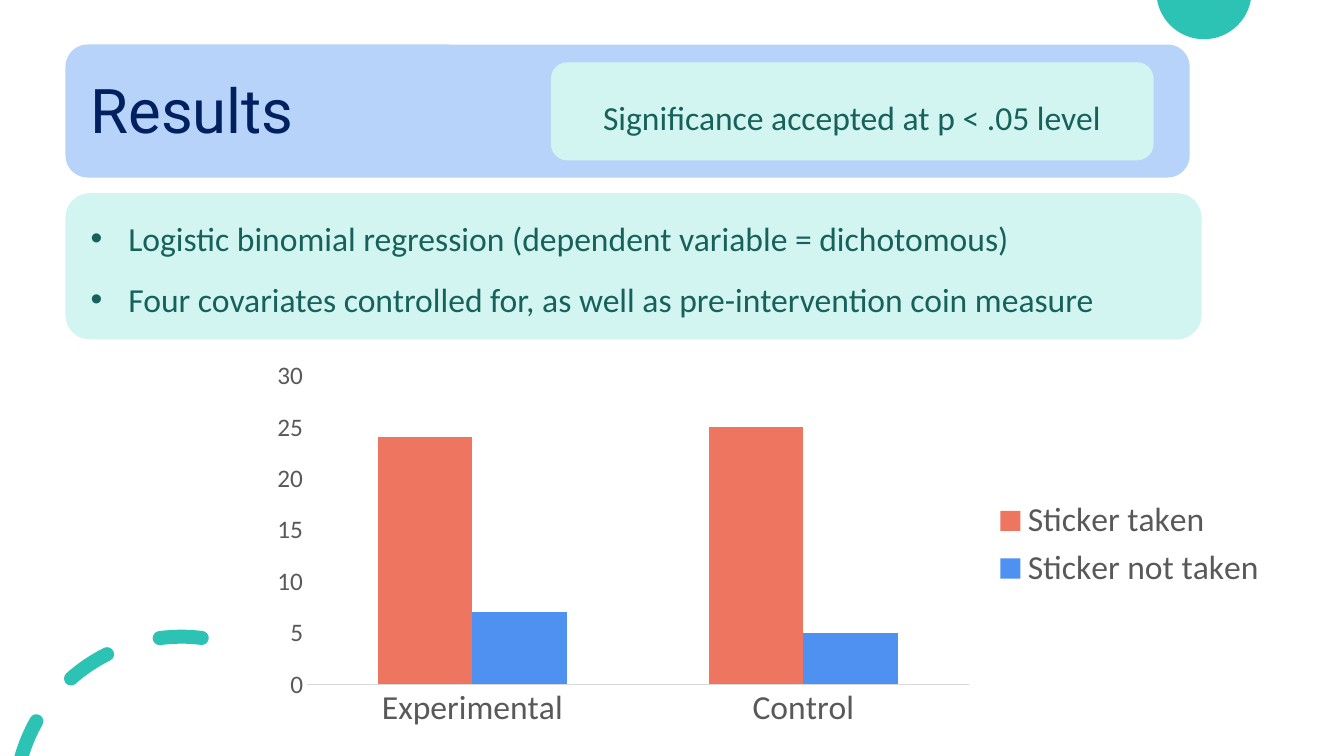
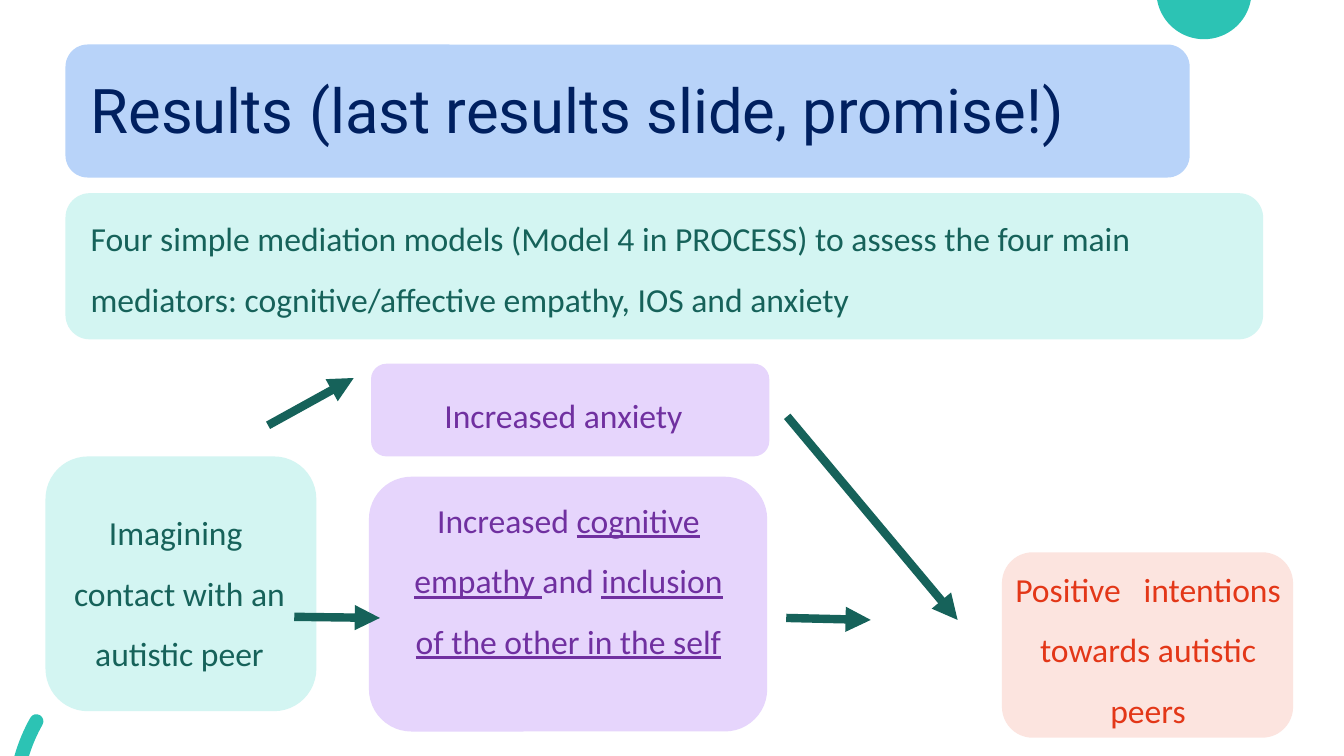
from math import cos, radians, sin, tan

from lxml import etree
from pptx import Presentation
from pptx.chart.data import CategoryChartData
from pptx.dml.color import RGBColor
from pptx.enum.chart import XL_CHART_TYPE, XL_LEGEND_POSITION, XL_TICK_MARK
from pptx.enum.shapes import MSO_CONNECTOR, MSO_SHAPE
from pptx.enum.text import MSO_ANCHOR, MSO_AUTO_SIZE, PP_ALIGN
from pptx.oxml.ns import qn
from pptx.util import Pt

COLUMN = XL_CHART_TYPE.COLUMN_CLUSTERED
RIGHT = XL_LEGEND_POSITION.RIGHT
NO_TICK = XL_TICK_MARK.NONE
ROUND = MSO_SHAPE.ROUNDED_RECTANGLE
STRAIGHT = MSO_CONNECTOR.STRAIGHT
TOP, MIDDLE = MSO_ANCHOR.TOP, MSO_ANCHOR.MIDDLE
FIXED = MSO_AUTO_SIZE.NONE
LEFT, CENTER = PP_ALIGN.LEFT, PP_ALIGN.CENTER

WIDTH, HEIGHT = 960, 540
TEAL, MINT, PINE = "2CC3B4", "D3F5F2", "16625A"
SKY, NAVY = "B8D3F9", "002060"
LILAC, PURPLE = "E6D5FC", "7030A0"
BLUSH, RED = "FCE4DF", "E33718"
GRAY, SILVER = "595959", "D9D9D9"
HEAD, BODY = "Roboto", "Calibri"
PLAIN, UNDER, WIDE = range(3)

# A paragraph is a list of (text, look) runs.
RESULTS = {
    "title": "Results",
    "body": ["Logistic binomial regression (dependent variable = dichotomous)",
             "Four covariates controlled for, as well as pre-intervention coin measure"],
    "bullets": True, "card": 811.5, "text": 792,
}
MODELS = {
    "title": "Results (last results slide, promise!)",
    "body": ["Four simple mediation models (Model 4 in PROCESS) to assess the four main "
             "mediators: cognitive/affective empathy, IOS and anxiety"],
    "bullets": False, "card": 855.5, "text": 828,
}
# Each card: box, fill, text box, text colour, paragraphs
NOTE = ((393.5, 44.5, 430.5, 70), MINT, (393.5, 51, 430, 45), PINE,
        [[("Significance accepted at p < .05 level", PLAIN)]])
CARDS = [
    ((32.5, 326, 193.5, 182), MINT, (16, 348, 224.5, 132), PINE,
     [[("Imagining ", PLAIN)], [("contact with an autistic peer", PLAIN)]]),
    ((265, 259.8, 284.5, 66.2), LILAC, (299, 264.3, 207, 45), PURPLE,
     [[("Increased anxiety", PLAIN)]]),
    ((263.5, 340.5, 284.5, 182), LILAC, (280.8, 339, 250.5, 176), PURPLE,
     [[("Increased ", PLAIN), ("cognitive empathy ", UNDER), ("and ", PLAIN),
       ("inclusion of the other in the self", UNDER)]]),
    ((715.7, 394.5, 208, 132.5), BLUSH, (712.8, 388.1, 214.5, 132), RED,
     [[("Positive", PLAIN), (" ", WIDE),
       ("intentions towards autistic peers", PLAIN)]]),
]
ARROWS = [(191.5, 303.8, 252.7, 270), (561.6, 441.4, 622, 442.8),
          (562.3, 297.4, 684, 442.8), (210.2, 440.6, 271.4, 441.4)]
GROUPS = ["Experimental", "Control"]
SERIES = [("Sticker taken", (24, 25), "EE7661"),
          ("Sticker not taken", (7, 5), "4E91F0")]
RING = (129.6, 573.8)
INNER, MID, OUTER = 114, 119, 124
DASHES = [(116.5, 131.5), (83, 97.5)]


def rgb(code):
    return RGBColor.from_string(code)


def pts(box):
    return [Pt(n) for n in box]


def place(shape, box):
    shape.left, shape.top, shape.width, shape.height = pts(box)


def paint(shape, color):
    shape.shadow.inherit = False
    shape.fill.solid()
    shape.fill.fore_color.rgb = rgb(color)
    shape.line.fill.background()
    return shape


def style(font, size, color, name=BODY):
    font.size, font.name = Pt(size), name
    font.color.rgb = rgb(color)


def card(slide, box, color):
    return paint(slide.shapes.add_shape(ROUND, *pts(box)), color)


def write(frame, paras, color, align=LEFT, size=24, name=BODY, gap=1.5, anchor=TOP):
    frame.word_wrap, frame.auto_size = True, FIXED
    frame.vertical_anchor = anchor
    for i, runs in enumerate(paras):
        para = frame.add_paragraph() if i else frame.paragraphs[0]
        para.alignment, para.line_spacing = align, gap
        para.space_before = Pt(0)
        for text, look in runs:
            run = para.add_run()
            run.text = text
            style(run.font, size, color, name)
            if look == UNDER:
                run.font.underline = True
            elif look == WIDE:
                run._r.get_or_add_rPr().set("spc", "1085")


def label(slide, box, fill, area, color, paras):
    """Draw a card with centred text over it."""
    card(slide, box, fill)
    frame = slide.shapes.add_textbox(*pts(area)).text_frame
    write(frame, paras, color, CENTER)


def spot(mid, radius, angle):
    turn = radians(angle)
    return mid[0] + radius * cos(turn), mid[1] - radius * sin(turn)


def arc(mid, radius, start, end, count=1):
    """Curves along a circle, each as two control points and an end."""
    step = (end - start) / count
    pull = radius * 4 / 3 * tan(radians(step) / 4)
    curves = []
    for i in range(count):
        a, b = start + i * step, start + (i + 1) * step
        near, far = spot(mid, radius, a), spot(mid, radius, b)
        curves.append([spot(near, pull, a + 90), spot(far, -pull, b + 90), far])
    return curves


def cap(angle, turn):
    return arc(spot(RING, MID, angle), OUTER - MID, turn, turn + 180, 2)


def dash(start, end):
    """Outline of a thick arc with round ends."""
    return (spot(RING, OUTER, start),
            arc(RING, OUTER, start, end) + cap(end, end)
            + arc(RING, INNER, end, start) + cap(start, start + 180))


def cut_dash(start, outer, inner):
    """Like dash, but ending flat at the slide's lower edge."""
    return (spot(RING, OUTER, start),
            arc(RING, OUTER, start, outer) + [[spot(RING, INNER, inner)]]
            + arc(RING, INNER, inner, start) + cap(start, start + 180))


def outline(slide, loops):
    """Draw loops of lines (one point) and curves (three points) as one shape."""
    form = None
    for start, steps in loops:
        if form:
            form.move_to(*pts(start))
        else:
            form = slide.shapes.build_freeform(*pts(start), scale=1.0)
        form.add_line_segments([pts(p) for step in steps for p in step], close=True)
    shape = form.convert_to_shape()
    lines = iter(list(shape._element.iter(qn("a:lnTo"))))
    for _, steps in loops:
        for step in steps:
            group = [next(lines) for _ in step]
            for extra in group[1:]:
                group[0].append(extra[0])
                extra.getparent().remove(extra)
            if len(step) == 3:
                curve = etree.Element(qn("a:cubicBezTo"))
                group[0].addprevious(curve)
                curve.extend(list(group[0]))
                group[0].getparent().remove(group[0])
    return paint(shape, TEAL)


def dress(layout, slide):
    """Move the shared shapes to the layout and set its title place."""
    sun, rim = (860, -6), 34
    left, right = -169.8, -10.2
    disc = (spot(sun, rim, left),
            [[spot(sun, rim, right)]] + arc(sun, rim, right, left, 2))
    dashes = [cut_dash(150.5, 164.18, 162.75)] + [dash(*ends) for ends in DASHES]
    parts = [outline(slide, [disc]), outline(slide, dashes),
             card(slide, (46.8, 31.8, 803, 95), SKY)]
    for part in parts:
        layout.shapes._spTree.append(part._element)
    place(layout.placeholders[0], (57.5, 28.8, 828, 104.4))


def fill(slide, data):
    write(slide.shapes.title.text_frame, [[(data["title"], PLAIN)]], NAVY,
          size=44, name=HEAD, gap=0.9, anchor=MIDDLE)
    card(slide, (46.8, 138, data["card"], 104.4), MINT)
    body = slide.placeholders[1]
    slide.shapes._spTree.append(body._element)
    place(body, (57.5, 137.8, data["text"], 89.3))
    if not data["bullets"]:
        props = body.text_frame.paragraphs[0]._p.get_or_add_pPr()
        props.set("marL", "0")
        props.set("indent", "0")
        etree.SubElement(props, qn("a:buNone"))
    write(body.text_frame, [[(text, PLAIN)] for text in data["body"]], PINE)


def plot(slide):
    data = CategoryChartData()
    data.categories = GROUPS
    for name, values, _ in SERIES:
        data.add_series(name, values)
    chart = slide.shapes.add_chart(COLUMN, *pts((183.6, 252, 729.4, 274.3)), data).chart
    chart.has_title = False
    style(chart.font, 18, GRAY)
    chart.has_legend = True
    chart.legend.position = RIGHT
    chart.legend.include_in_layout = False
    style(chart.legend.font, 24, GRAY)
    bars = chart.plots[0]
    bars.vary_by_categories = False
    bars.gap_width, bars.overlap = 150, 0
    for bar, (_, _, color) in zip(bars.series, SERIES):
        bar.format.fill.solid()
        bar.format.fill.fore_color.rgb = rgb(color)
    cats, vals = chart.category_axis, chart.value_axis
    for axis, size in ((cats, 24), (vals, 18)):
        axis.major_tick_mark = axis.minor_tick_mark = NO_TICK
        axis.has_major_gridlines = False
        style(axis.tick_labels.font, size, GRAY)
    cats.format.line.color.rgb = rgb(SILVER)
    cats.format.line.width = Pt(0.75)
    vals.format.line.fill.background()
    vals.minimum_scale, vals.maximum_scale, vals.major_unit = 0, 30, 5


def arrow(slide, ends):
    link = slide.shapes.add_connector(STRAIGHT, *pts(ends))
    link.line.color.rgb = rgb(PINE)
    link.line.width = Pt(6)
    etree.SubElement(link.line._get_or_add_ln(), qn("a:tailEnd"), type="triangle")
    etree.SubElement(link._element.spPr, qn("a:effectLst"))


def main():
    deck = Presentation()
    deck.slide_width, deck.slide_height = Pt(WIDTH), Pt(HEIGHT)
    layout = deck.slide_layouts[1]
    first, second = [deck.slides.add_slide(layout) for _ in range(2)]
    dress(layout, first)

    fill(first, RESULTS)
    label(first, *NOTE)
    plot(first)

    fill(second, MODELS)
    for item in CARDS:
        label(second, *item)
    for ends in ARROWS:
        arrow(second, ends)
    deck.save("out.pptx")


if __name__ == "__main__":
    main()
